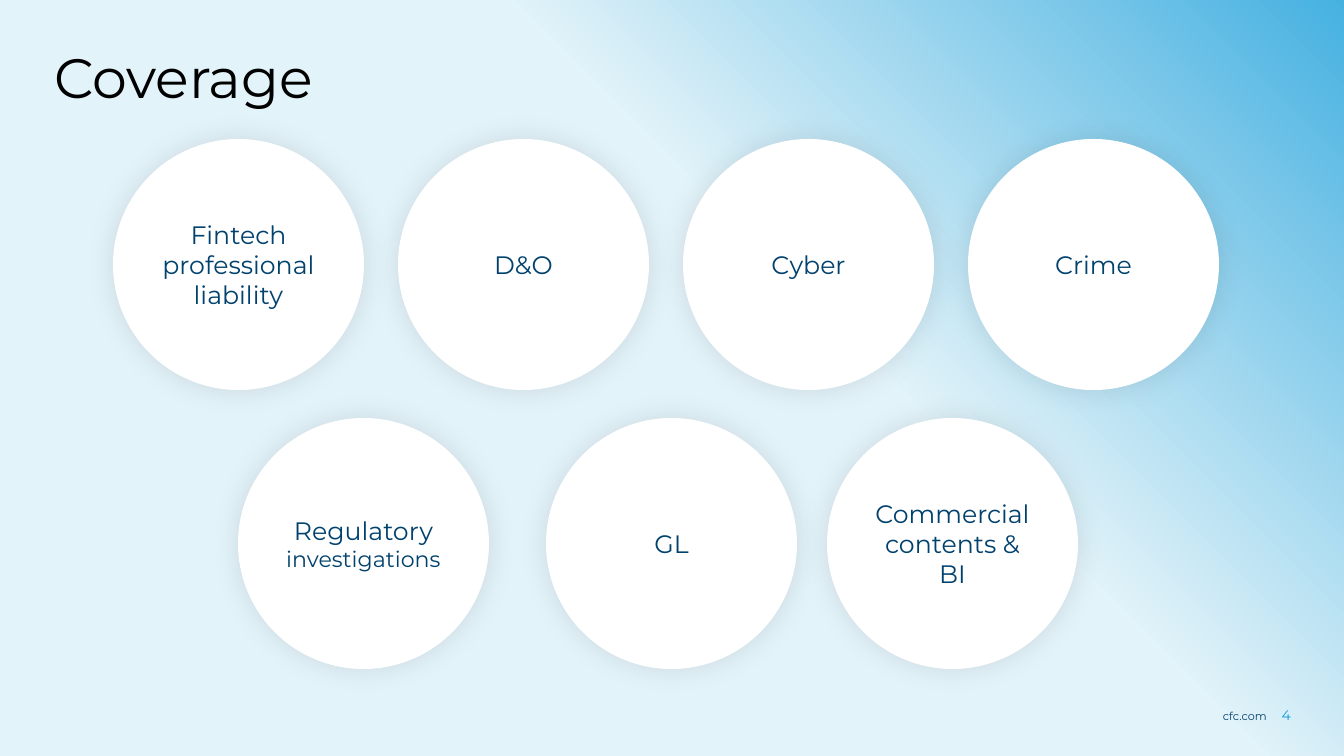
from lxml import etree
from pptx import Presentation
from pptx.dml.color import RGBColor
from pptx.enum.shapes import MSO_SHAPE as Shape
from pptx.enum.text import MSO_ANCHOR as Anchor, MSO_AUTO_SIZE as AutoSize, PP_ALIGN as Align
from pptx.oxml import parse_xml
from pptx.oxml.ns import nsdecls, qn
from pptx.util import Emu, Pt

BLACK = RGBColor(0x00, 0x00, 0x00)
WHITE = RGBColor(0xFF, 0xFF, 0xFF)
NAVY = RGBColor(0x01, 0x41, 0x6D)
BLUE = RGBColor(0x14, 0x9B, 0xD7)
SKY = RGBColor(0x46, 0xB1, 0xE1)
PALE = RGBColor(0xE2, 0xF3, 0xF9)
FONT = "Montserrat"
WIDTH, HEIGHT = 1344, 756
DIAMETER = 251


def px(length):
    return Emu(round(length * 914400 / 100.8))


def style(span, size, color):
    span.font.name = FONT
    span.font.size = Pt(size)
    span.font.color.rgb = color


deck = Presentation()
deck.slide_width, deck.slide_height = px(WIDTH), px(HEIGHT)
page = deck.slides.add_slide(deck.slide_layouts[5])
shapes = page.shapes

# Gradient backdrop, placed behind the title
backdrop = shapes.add_shape(Shape.RECTANGLE, 0, px(-1), px(WIDTH), px(HEIGHT + 1))
backdrop.shadow.inherit = False
backdrop.line.fill.background()
backdrop.fill.gradient()
backdrop.fill.gradient_angle = 225
for stop, position, color in zip(backdrop.fill.gradient_stops, (0, 0.4), (SKY, PALE)):
    stop.position = position
    stop.color.rgb = color
shapes._spTree.insert(2, backdrop._element)

# Footer: address and page number on two right tabs
footer = shapes.add_textbox(px(1095), px(707), px(204), px(30))
frame = footer.text_frame
frame.word_wrap = True
frame.margin_left = frame.margin_top = frame.margin_right = frame.margin_bottom = 0
para = frame.paragraphs[0]
tabs = etree.SubElement(para._p.get_or_add_pPr(), qn("a:tabLst"))
for stop in (172, 196):
    etree.SubElement(tabs, qn("a:tab"), pos=str(px(stop)), algn="r")
for text, size, color in (("\tcfc.com", 8, NAVY), ("\t4", 10, BLUE)):
    span = para.add_run()
    span.text = text
    style(span, size, color)

# Title
title = shapes.title
title.left, title.top, title.width, title.height = px(44), px(50), px(1159), px(62)
title.text_frame.text = "Coverage"
title.text_frame.auto_size = AutoSize.NONE
title.text_frame.vertical_anchor = Anchor.MIDDLE
para = title.text_frame.paragraphs[0]
para.alignment = Align.LEFT
para.line_spacing = 0.9
style(para.runs[0], 39.6, BLACK)

# Coverage circles: four evenly spaced above, three below
upper = ["Fintech professional liability", "D&O", "Cyber", "Crime"]
lower = [(238, "Regulatory"), (546, "GL"), (827, "Commercial contents & BI")]
circles = [(113 + 285 * column, 139, label) for column, label in enumerate(upper)]
circles += [(left, 418, label) for left, label in lower]

for left, top, label in circles:
    circle = shapes.add_shape(Shape.OVAL, px(left), px(top), px(DIAMETER), px(DIAMETER))
    circle.fill.solid()
    circle.fill.fore_color.rgb = WHITE
    circle.line.fill.background()
    circle.shadow.inherit = False
    glow = parse_xml(
        f'<a:outerShdw {nsdecls("a")} blurRad="{Pt(20)}" dist="0" algn="ctr" rotWithShape="0">'
        '<a:srgbClr val="000000"><a:alpha val="10000"/></a:srgbClr></a:outerShdw>')
    circle._element.spPr.find(qn("a:effectLst")).append(glow)
    frame = circle.text_frame
    frame.text = label
    frame.word_wrap = True
    frame.vertical_anchor = Anchor.MIDDLE
    para = frame.paragraphs[0]
    para.alignment = Align.CENTER
    style(para.runs[0], 18, NAVY)
    if label == "Regulatory":
        span = para.add_run()
        span.text = " investigations"
        style(span, 15.8, NAVY)

deck.save("out.pptx")
